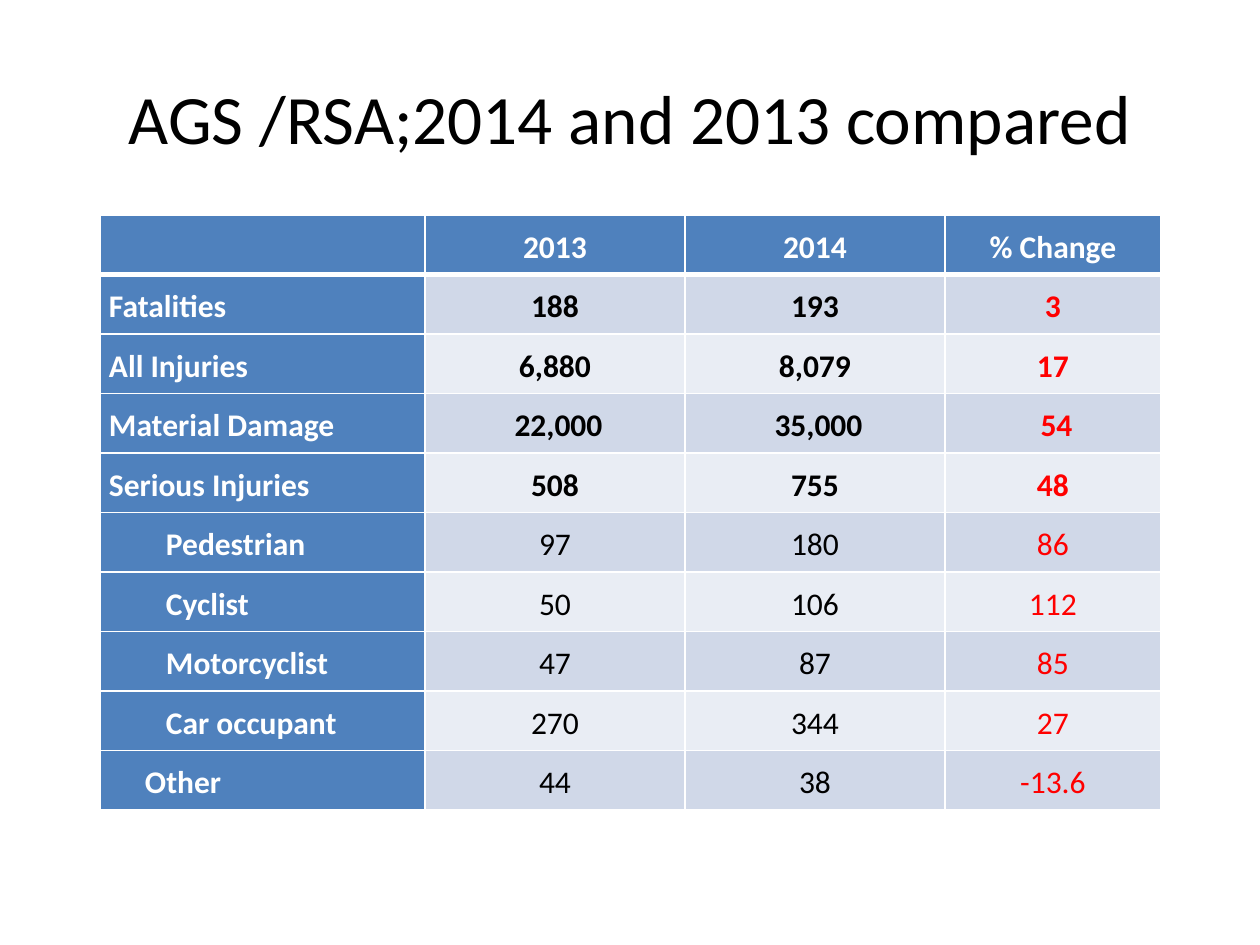
from lxml.etree import SubElement
from pptx import Presentation
from pptx.dml.color import RGBColor
from pptx.enum.text import MSO_ANCHOR, PP_ALIGN
from pptx.oxml.ns import qn
from pptx.util import Pt

EMU_PER_PX = 914400 // 126
FONT = "Calibri"
WHITE = RGBColor(0xFF, 0xFF, 0xFF)
BLACK = RGBColor(0x00, 0x00, 0x00)
RED = RGBColor(0xFF, 0x00, 0x00)
BLUE = RGBColor(0x4F, 0x81, 0xBD)
BANDS = (RGBColor(0xD0, 0xD8, 0xE8), RGBColor(0xE9, 0xED, 0xF4))

COLUMN_WIDTHS = (325, 260, 260, 216)
TABLE_HEIGHT = 595
HEADER = ("", "2013", "2014", "% Change")
MAIN_ROWS = (
    ("Fatalities", "188", "193", "3"),
    ("All Injuries", "6,880", "8,079", "17"),
    ("Material Damage", " 22,000", " 35,000", " 54"),
    ("Serious Injuries", "508", "755", "48"),
)
DETAIL_ROWS = (
    ("Pedestrian", "97", "180", "86"),
    ("Cyclist", "50", "106", "112"),
    ("Motorcyclist", "47", "87", "85"),
    ("Car occupant", "270", "344", "27"),
    ("Other", "44", "38", "-13.6"),
)
LABEL_INDENTS = {"Other": 36}
DETAIL_INDENT = 57
CELL_FORMAT = {"margin_left": 9, "margin_right": 9, "margin_top": 0, "margin_bottom": 0}


def px(value):
    return value * EMU_PER_PX


def format_font(font, size, color, bold=False):
    values = {"name": FONT, "size": Pt(size), "bold": bold}
    for name, value in values.items():
        setattr(font, name, value)
    font.color.rgb = color


def set_borders(cell, top, bottom):
    """Draw white cell borders; top and bottom widths are in points."""
    properties = cell._tc.get_or_add_tcPr()
    widths = {"lnL": 1, "lnR": 1, "lnT": top, "lnB": bottom}
    for position, (side, width) in enumerate(widths.items()):
        line = SubElement(properties, qn(f"a:{side}"), w=str(Pt(width)))
        fill = SubElement(line, qn("a:solidFill"))
        SubElement(fill, qn("a:srgbClr"), val=str(WHITE))
        properties.insert(position, line)


def fill_cell(cell, text, fill, color, bold, alignment, indent=0):
    for name, value in CELL_FORMAT.items():
        setattr(cell, name, px(value))
    cell.vertical_anchor = MSO_ANCHOR.MIDDLE
    cell.fill.solid()
    cell.fill.fore_color.rgb = fill
    paragraph = cell.text_frame.paragraphs[0]
    paragraph.alignment = alignment
    paragraph.line_spacing = 1.15
    if indent:
        paragraph._p.get_or_add_pPr().set("marL", str(px(indent)))
    if text:
        run = paragraph.add_run()
        run.text = text
        format_font(run.font, 18, color, bold)


def add_title(slide, text):
    title = slide.shapes.title
    title.left, title.top, title.width, title.height = map(px, (63, 38, 1134, 158))
    frame = title.text_frame
    frame.vertical_anchor = MSO_ANCHOR.MIDDLE
    frame.text = text
    paragraph = frame.paragraphs[0]
    paragraph.alignment = PP_ALIGN.CENTER
    format_font(paragraph.runs[0].font, 39.6, BLACK)


def add_casualty_table(slide):
    rows = (HEADER, *MAIN_ROWS, *DETAIL_ROWS)
    table = slide.shapes.add_table(
        len(rows), len(HEADER), px(100), px(215), px(sum(COLUMN_WIDTHS)), px(TABLE_HEIGHT)
    ).table
    table.horz_banding = False
    for column, width in zip(table.columns, COLUMN_WIDTHS):
        column.width = px(width)
    for row in table.rows:
        row.height = px(TABLE_HEIGHT) // len(rows)

    for row_index, values in enumerate(rows):
        is_header = row_index == 0
        is_detail = row_index > len(MAIN_ROWS)
        for column_index, text in enumerate(values):
            cell = table.cell(row_index, column_index)
            is_label = column_index == 0
            if is_header or is_label:
                fill, color = BLUE, WHITE
            else:
                fill = BANDS[(row_index - 1) % 2]
                color = RED if column_index == len(HEADER) - 1 else BLACK
            alignment = PP_ALIGN.LEFT if is_label else PP_ALIGN.CENTER
            indent = LABEL_INDENTS.get(text, DETAIL_INDENT) if is_label and is_detail else 0
            fill_cell(cell, text, fill, color, is_label or not is_detail, alignment, indent)
            set_borders(cell, top=3 if row_index == 1 else 1, bottom=3 if is_header else 1)


def main():
    presentation = Presentation()
    presentation.slide_width = px(1260)
    presentation.slide_height = px(945)
    slide = presentation.slides.add_slide(presentation.slide_layouts[5])
    add_title(slide, "AGS /RSA;2014 and 2013 compared")
    add_casualty_table(slide)
    presentation.save("out.pptx")


if __name__ == "__main__":
    main()
